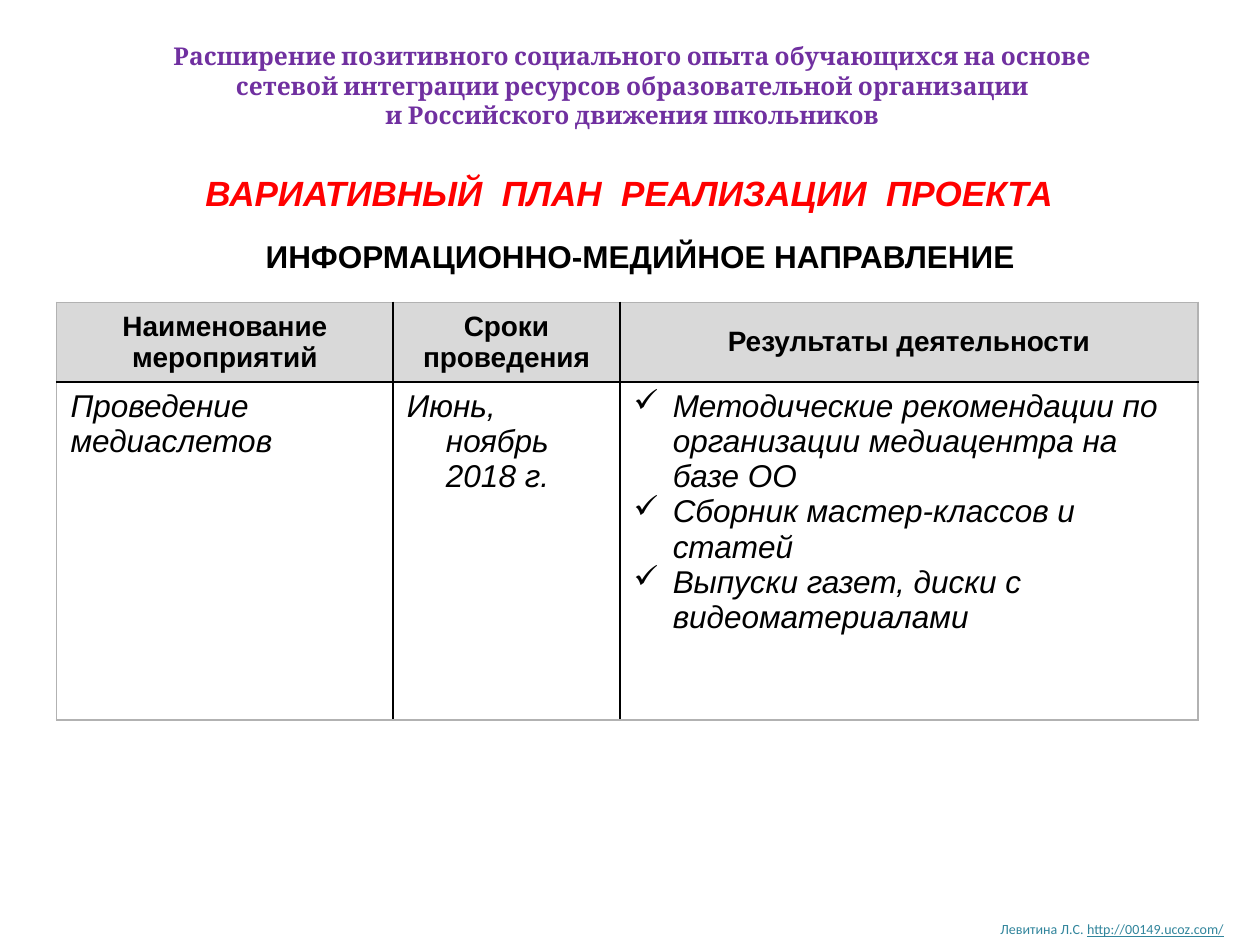
import pptx
import pptx.dml.color
import pptx.enum.text
import pptx.oxml
import pptx.oxml.ns
import pptx.util

Inches = pptx.util.Inches
Pt = pptx.util.Pt
ALIGN = pptx.enum.text.PP_ALIGN
ANCHOR = pptx.enum.text.MSO_ANCHOR

COLORS = {
    "black": "000000",
    "red": "FF0000",
    "purple": "7030A0",
    "teal": "31859C",
    "header": "D9D9D9",
    "frame": "B2B2B2",
}
HANGING = 0.31


def color(name):
    return pptx.dml.color.RGBColor.from_string(COLORS[name])


class PlanSlide:
    """Holds the text style and the slide being filled."""

    def __init__(self, page):
        self.page = page
        self.font = "Arial"

    def format_text(self, frame, size, tint="black", bold=False, italic=False,
                    align=ALIGN.LEFT, font=None):
        for para in frame.paragraphs:
            para.alignment = align
            for span in para.runs:
                span.font.name = font or self.font
                span.font.size = Pt(size)
                span.font.bold = bold
                span.font.italic = italic
                span.font.color.rgb = color(tint)

    def title(self, place, text, **style):
        box = self.page.shapes.title
        box.left, box.top, box.width, box.height = map(Inches, place)
        frame = box.text_frame
        frame.text = text
        frame.vertical_anchor = ANCHOR.TOP
        frame.auto_size = pptx.enum.text.MSO_AUTO_SIZE.NONE
        self.format_text(frame, **style)

    def text(self, place, text, wrap=True, **style):
        box = self.page.shapes.add_textbox(*map(Inches, place))
        frame = box.text_frame
        frame.word_wrap = wrap
        frame.text = text
        self.format_text(frame, **style)
        return frame

    def table(self, place, widths, heights, rows):
        shape = self.page.shapes.add_table(len(rows), len(widths), *map(Inches, place))
        table = shape.table
        table.first_row = table.horz_banding = False
        for column, width in zip(table.columns, widths):
            column.width = Inches(width)
        for row, height in zip(table.rows, heights):
            row.height = Inches(height)
        last_row, last_column = len(rows) - 1, len(widths) - 1
        for r, texts in enumerate(rows):
            for c, text in enumerate(texts):
                cell = table.cell(r, c)
                cell.text = text
                cell.margin_left = cell.margin_right = Inches(0.11)
                cell.margin_top = cell.margin_bottom = Inches(0.05)
                outer = {"L": c == 0, "R": c == last_column,
                         "T": r == 0, "B": r == last_row}
                self.borders(cell, outer)
                if r == 0:
                    cell.fill.solid()
                    cell.fill.fore_color.rgb = color("header")
                    cell.vertical_anchor = ANCHOR.MIDDLE
                    self.format_text(cell.text_frame, 16, bold=True, align=ALIGN.CENTER)
                else:
                    cell.fill.background()
                    cell.vertical_anchor = ANCHOR.TOP
                    self.format_text(cell.text_frame, 18, italic=True)
        return table

    def borders(self, cell, outer):
        properties = cell._tc.get_or_add_tcPr()
        for position, (side, is_outer) in enumerate(outer.items()):
            tint = COLORS["frame" if is_outer else "black"]
            line = pptx.oxml.parse_xml(
                f'<a:ln{side} {pptx.oxml.ns.nsdecls("a")} w="12700"><a:solidFill>'
                f'<a:srgbClr val="{tint}"/></a:solidFill></a:ln{side}>')
            properties.insert(position, line)

    def hang(self, cell, bullet=None):
        for para in cell.text_frame.paragraphs:
            properties = para._p.get_or_add_pPr()
            properties.set("marL", str(Inches(HANGING)))
            properties.set("indent", str(-Inches(HANGING)))
            if bullet:
                properties.append(pptx.oxml.parse_xml(
                    f'<a:buChar {pptx.oxml.ns.nsdecls("a")} char="{bullet}"/>'))


def main():
    deck = pptx.Presentation()
    deck.slide_width, deck.slide_height = Inches(10), Inches(7.5)
    plan = PlanSlide(deck.slides.add_slide(deck.slide_layouts[5]))

    # Headings
    plan.title((0.35, 1.31, 9.29, 0.44), "ВАРИАТИВНЫЙ  ПЛАН  РЕАЛИЗАЦИИ  ПРОЕКТА",
               size=20, tint="red", bold=True, italic=True, align=ALIGN.CENTER)
    plan.text((0.32, 0.28, 9.4, 0.81),
              "Расширение позитивного социального опыта обучающихся на основе\n"
              "сетевой интеграции ресурсов образовательной организации\n"
              "и Российского движения школьников",
              size=14, tint="purple", bold=True, align=ALIGN.CENTER, font="Cambria")
    plan.text((2.01, 1.83, 6.21, 0.4), "ИНФОРМАЦИОННО-МЕДИЙНОЕ НАПРАВЛЕНИЕ",
              wrap=False, size=18, bold=True)

    # Plan of events
    rows = [
        ["Наименование мероприятий", "Сроки\nпроведения", "Результаты деятельности"],
        ["Проведение медиаслетов", "Июнь, ноябрь 2018 г.",
         "Методические рекомендации по организации медиацентра на базе ОО\n"
         "Сборник мастер-классов и статей\n"
         "Выпуски газет, диски с видеоматериалами"],
    ]
    table = plan.table((0.45, 2.4, 9.06, 3.31), (2.67, 1.8, 4.59), (0.63, 2.68), rows)
    plan.hang(table.cell(1, 1))
    plan.hang(table.cell(1, 2), bullet="✓")

    # Author and site
    credit = plan.text((7.84, 7.26, 2.02, 0.24), "Левитина Л.С. ", wrap=False,
                       size=8, tint="teal", font="Calibri")
    address = credit.paragraphs[0].add_run()
    address.text = "http://00149.ucoz.com/"
    plan.format_text(credit, size=8, tint="teal", font="Calibri")
    address.font.underline = True

    deck.save("out.pptx")


if __name__ == "__main__":
    main()
